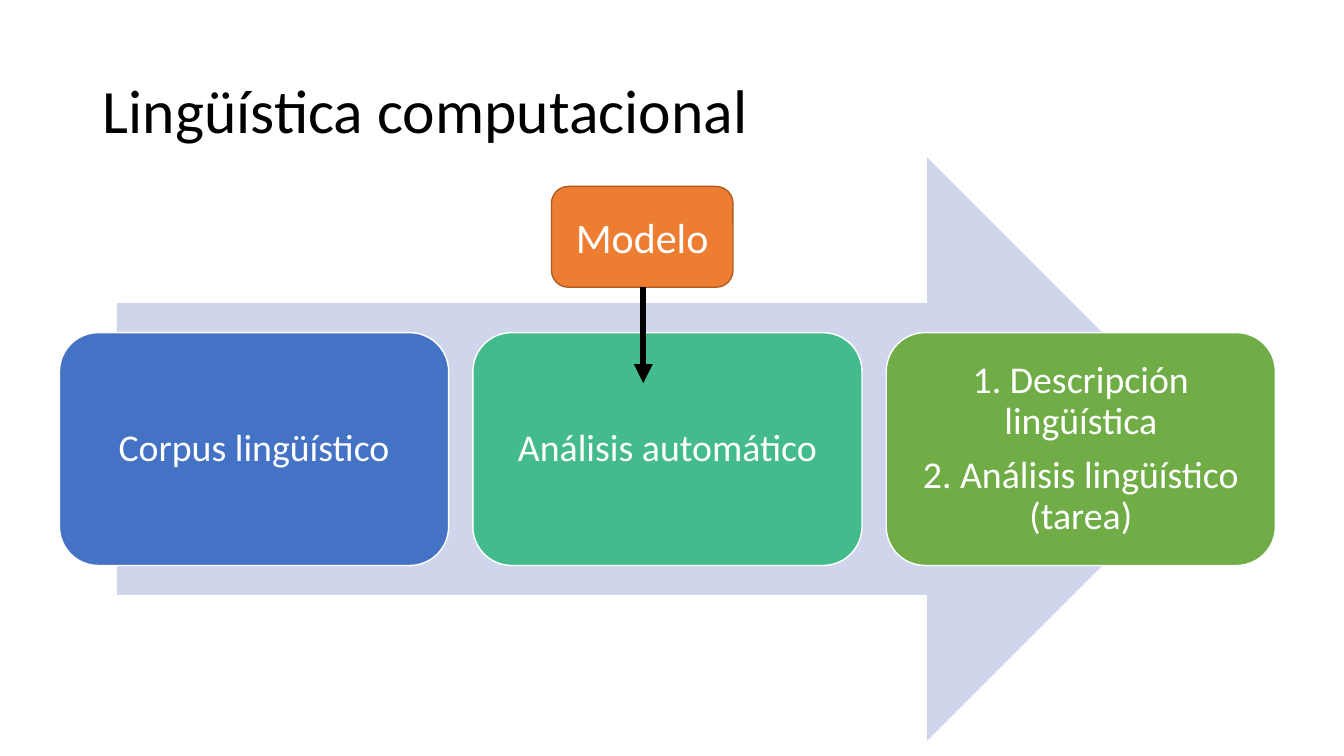
from dataclasses import dataclass

from lxml import etree
from pptx import Presentation
from pptx.dml.color import RGBColor
from pptx.enum.shapes import MSO_CONNECTOR, MSO_SHAPE
from pptx.enum.text import MSO_ANCHOR, PP_ALIGN
from pptx.oxml.ns import qn
from pptx.shapes.autoshape import Shape
from pptx.slide import Slide
from pptx.util import Inches, Pt

ROUNDED = MSO_SHAPE.ROUNDED_RECTANGLE
RIGHT_ARROW = MSO_SHAPE.RIGHT_ARROW
STRAIGHT = MSO_CONNECTOR.STRAIGHT
CENTER = PP_ALIGN.CENTER
MIDDLE = MSO_ANCHOR.MIDDLE

FONT = "Calibri"
BLACK = RGBColor(0x00, 0x00, 0x00)
WHITE = RGBColor(0xFF, 0xFF, 0xFF)
PALE_BLUE = RGBColor(0xCF, 0xD5, 0xEA)
BLUE = RGBColor(0x44, 0x72, 0xC4)
TEAL = RGBColor(0x43, 0xBB, 0x8D)
GREEN = RGBColor(0x70, 0xAD, 0x47)
ORANGE = RGBColor(0xED, 0x7D, 0x31)
DARK_ORANGE = RGBColor(0xAF, 0x5C, 0x24)

STAGE_LEFT, STAGE_TOP = 0.59, 3.3
STAGE_WIDTH, STAGE_HEIGHT = 3.86, 2.31
STAGE_PITCH = 4.1
STAGE_SIZE = 27


@dataclass(frozen=True)
class Box:
    lines: tuple[str, ...]
    left: float
    top: float
    width: float
    height: float
    fill: RGBColor
    outline: RGBColor
    size: float
    inset: float = 0.1
    line_spacing: float = 1.0
    space_after: float = 0


STAGES = (
    (("Corpus lingüístico",), BLUE),
    (("Análisis automático",), TEAL),
    (("1. Descripción lingüística", "2. Análisis lingüístico (tarea)"), GREEN),
)
MODEL = Box(("Modelo",), 5.47, 1.85, 1.8, 1, ORANGE, DARK_ORANGE, 30)


def add_title(slide: Slide, text: str) -> None:
    title = slide.shapes.title
    title.left, title.top = Inches(0.92), Inches(0.4)
    title.width, title.height = Inches(11.5), Inches(1.45)
    title.text_frame.text = text
    title.text_frame.vertical_anchor = MIDDLE
    heading = title.text_frame.paragraphs[0]
    heading.alignment = PP_ALIGN.LEFT
    heading.line_spacing = 0.9
    heading.font.name = FONT
    heading.font.size = Pt(44)
    heading.font.color.rgb = BLACK


def add_process_arrow(slide: Slide) -> None:
    arrow = slide.shapes.add_shape(
        RIGHT_ARROW, Inches(1.16), Inches(1.56), Inches(10.93), Inches(5.79))
    arrow.shadow.inherit = False
    arrow.fill.solid()
    arrow.fill.fore_color.rgb = PALE_BLUE
    arrow.line.fill.background()


def add_box(slide: Slide, box: Box) -> Shape:
    shape = slide.shapes.add_shape(
        ROUNDED, Inches(box.left), Inches(box.top),
        Inches(box.width), Inches(box.height))
    shape.shadow.inherit = False
    shape.fill.solid()
    shape.fill.fore_color.rgb = box.fill
    shape.line.color.rgb = box.outline
    shape.line.width = Pt(1)

    frame = shape.text_frame
    frame.word_wrap = True
    frame.vertical_anchor = MIDDLE
    frame.margin_left = frame.margin_right = Inches(box.inset)
    frame.margin_top = frame.margin_bottom = Inches(box.inset)
    frame.text = "\n".join(box.lines)
    for paragraph in frame.paragraphs:
        paragraph.alignment = CENTER
        paragraph.line_spacing = box.line_spacing
        paragraph.space_after = Pt(box.space_after)
        paragraph.font.name = FONT
        paragraph.font.size = Pt(box.size)
        paragraph.font.color.rgb = WHITE
    return shape


def add_model_arrow(slide: Slide) -> None:
    x = Inches(6.38)
    arrow = slide.shapes.add_connector(
        STRAIGHT, x, Inches(MODEL.top + MODEL.height), x, Inches(3.8))
    arrow.line.color.rgb = BLACK
    arrow.line.width = Pt(4.5)
    etree.SubElement(arrow.line._get_or_add_ln(), qn("a:tailEnd"), type="triangle")
    etree.SubElement(arrow._element.spPr, qn("a:effectLst"))


def main() -> None:
    presentation = Presentation()
    presentation.slide_width = Inches(13.33)
    presentation.slide_height = Inches(7.5)
    title_only = presentation.slide_layouts[5]
    slide = presentation.slides.add_slide(title_only)

    add_title(slide, "Lingüística computacional")
    add_process_arrow(slide)
    for index, (lines, fill) in enumerate(STAGES):
        add_box(slide, Box(
            lines, STAGE_LEFT + index * STAGE_PITCH, STAGE_TOP,
            STAGE_WIDTH, STAGE_HEIGHT, fill, WHITE, STAGE_SIZE,
            inset=0.11, line_spacing=0.9, space_after=0.35 * STAGE_SIZE))
    add_box(slide, MODEL)
    add_model_arrow(slide)
    presentation.save("out.pptx")


if __name__ == "__main__":
    main()
